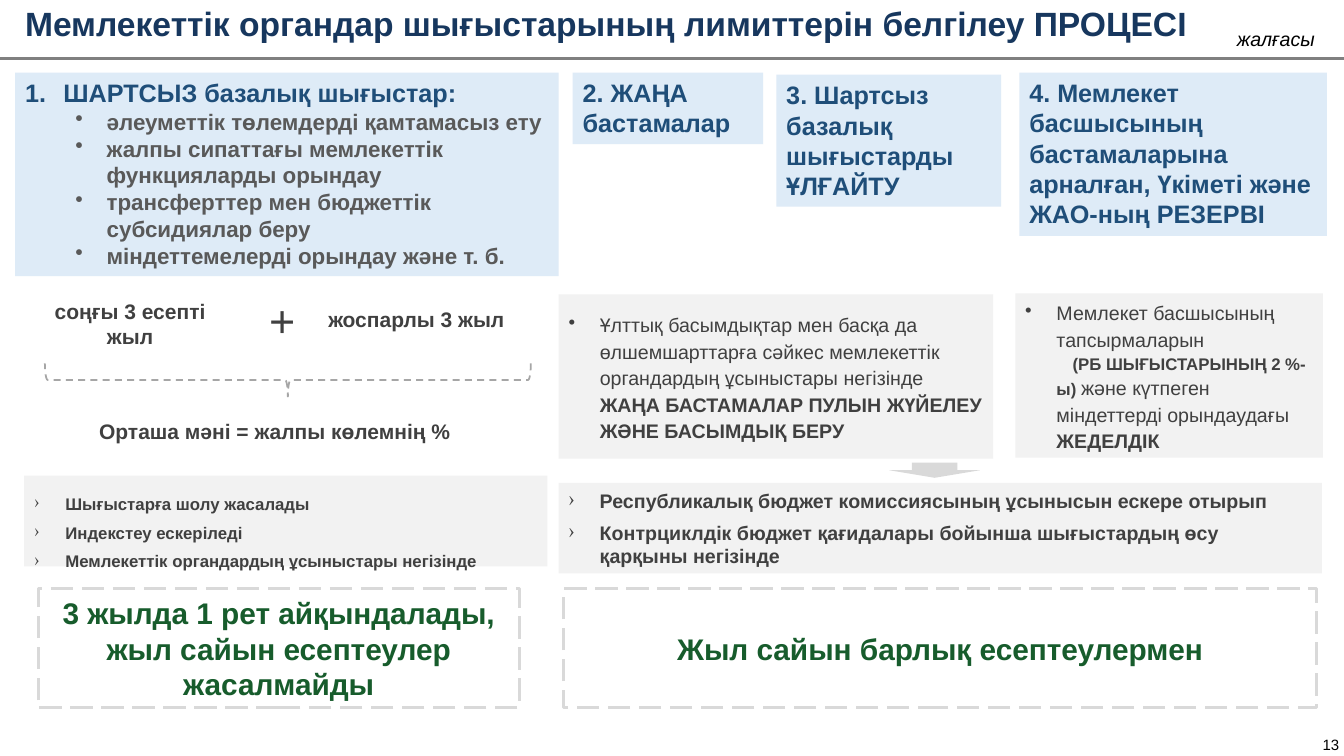
from lxml import etree
from pptx import Presentation
from pptx.dml.color import RGBColor
from pptx.enum.dml import MSO_LINE_DASH_STYLE as Dash
from pptx.enum.shapes import MSO_CONNECTOR as Connector, MSO_SHAPE as Preset
from pptx.enum.text import MSO_ANCHOR as Anchor, PP_ALIGN as Align
from pptx.oxml.ns import qn
from pptx.util import Inches, Pt

NAVY = RGBColor(0x17, 0x37, 0x5E)
BLUE = RGBColor(0x1F, 0x4E, 0x79)
PALE_BLUE = RGBColor(0xDE, 0xEB, 0xF7)
PALE_GREY = RGBColor(0xF2, 0xF2, 0xF2)
LIGHT_GREY = RGBColor(0xD9, 0xD9, 0xD9)
BRACE_GREY = RGBColor(0xA6, 0xA6, 0xA6)
RULE_GREY = RGBColor(0x80, 0x80, 0x80)
MID_GREY = RGBColor(0x59, 0x59, 0x59)
DARK_GREY = RGBColor(0x40, 0x40, 0x40)
GREEN = RGBColor(0x17, 0x5C, 0x2C)
BLACK = RGBColor(0, 0, 0)


def add_para(box, content, size, color=DARK_GREY, bold=False, italic=False,
             align=Align.LEFT, bullet=None, margin=0, indent=0, level=0,
             after=0, spacing=None):
    """Add a paragraph; content is text or a list of (text, size, bold)."""
    frame = box.text_frame
    para = frame.paragraphs[0]
    if para.runs:
        para = frame.add_paragraph()
    para.alignment = align
    para.level = level
    props = para._p.get_or_add_pPr()
    props.set("marL", str(Inches(margin)))
    props.set("indent", str(Inches(indent)))
    if bullet == "1.":
        etree.SubElement(props, qn("a:buAutoNum"), type="arabicPeriod")
    elif bullet:
        etree.SubElement(props, qn("a:buChar"), char=bullet)
    else:
        etree.SubElement(props, qn("a:buNone"))
    para.space_after = Pt(after)
    if spacing:
        para.line_spacing = spacing
    font = para.font
    font.name, font.size, font.bold, font.italic = "Arial", Pt(size), bold, italic
    font.color.rgb = color
    if isinstance(content, str):
        para.add_run().text = content
        return
    for text, span_size, span_bold in content:
        span = para.add_run()
        span.text = text
        span.font.size, span.font.bold = Pt(span_size), span_bold


def add_label(page, area, text, size, **style):
    box = page.shapes.add_textbox(*map(Inches, area))
    box.text_frame.word_wrap = True
    add_para(box, text, size, **style)
    return box


def add_figure(page, preset, area, fill=None, line=None, width=1, dash=None,
               anchor=Anchor.MIDDLE):
    figure = page.shapes.add_shape(preset, *map(Inches, area))
    figure.shadow.inherit = False
    if fill is not None:
        figure.fill.solid()
        figure.fill.fore_color.rgb = fill
    else:
        figure.fill.background()
    if line is not None:
        figure.line.color.rgb = line
        figure.line.width = Pt(width)
        figure.line.dash_style = dash
    else:
        figure.line.fill.background()
    figure.text_frame.word_wrap = True
    figure.text_frame.vertical_anchor = anchor
    return figure


def add_heading_card(page, area, text, **style):
    card = add_figure(page, Preset.RECTANGLE, area, PALE_BLUE, anchor=Anchor.TOP)
    add_para(card, text, 18, color=BLUE, bold=True, **style)
    return card


def add_list_panel(page, area, items, size, anchor=Anchor.MIDDLE):
    panel = add_figure(page, Preset.RECTANGLE, area, PALE_GREY, anchor=anchor)
    for item in items:
        add_para(panel, item, size, bold=True, bullet="›",
                 margin=0.31, indent=-0.31, after=6)
    return panel


def add_result(page, area, text):
    result = add_figure(page, Preset.RECTANGLE, area, line=LIGHT_GREY, width=2,
                        dash=Dash.LONG_DASH)
    add_para(result, text, 21.3, color=GREEN, bold=True, align=Align.CENTER)


def add_rule(page, y):
    rule = page.shapes.add_connector(Connector.STRAIGHT, 0, Inches(y),
                                     Inches(13.33), Inches(y))
    rule.line.color.rgb = RULE_GREY
    rule.line.width = Pt(2.25)
    etree.SubElement(rule._element.spPr, qn("a:effectLst"))


def main():
    deck = Presentation()
    deck.slide_width, deck.slide_height = Inches(13.33), Inches(7.5)
    page = deck.slides.add_slide(deck.slide_layouts[6])

    # Header and page number
    add_rule(page, 0.58)
    add_label(page, (0.15, 0.02, 11.97, 0.51),
              "Мемлекеттік органдар шығыстарының лимиттерін белгілеу ПРОЦЕСІ",
              24, color=NAVY, bold=True, spacing=0.9, after=5.9)
    add_label(page, (12.17, 0.22, 0.98, 0.34), "жалғасы", 14,
              color=BLACK, italic=True)
    number = add_label(page, (13.07, 7.27, 0.26, 0.24), "13", 10.7,
                       color=BLACK, align=Align.CENTER)
    frame = number.text_frame
    frame.margin_left = frame.margin_right = 0
    frame.vertical_anchor = Anchor.MIDDLE

    # Four heading cards
    base = add_heading_card(page, (0.15, 0.72, 5.39, 2.02),
                            "ШАРТСЫЗ базалық шығыстар:",
                            bullet="1.", margin=0.38, indent=-0.38)
    for item in ("әлеуметтік төлемдерді қамтамасыз ету",
                 "жалпы сипаттағы мемлекеттік функцияларды орындау",
                 "трансферттер мен бюджеттік субсидиялар беру",
                 "міндеттемелерді орындау және т. б."):
        add_para(base, item, 16, color=MID_GREY, bold=True, bullet="•",
                 margin=0.81, indent=-0.31, level=1)
    add_heading_card(page, (5.68, 0.72, 1.89, 0.71), "2. ЖАҢА бастамалар")
    add_heading_card(page, (7.7, 0.74, 2.23, 1.31),
                     "3. Шартсыз базалық шығыстарды ҰЛҒАЙТУ")
    add_heading_card(page, (10.11, 0.72, 3.05, 1.62),
                     "4. Мемлекет басшысының бастамаларына арналған, "
                     "Үкіметі және ЖАО-ның РЕЗЕРВІ")

    # Average formula with brace
    for area, text in (
            ((0.2, 2.91, 2.18, 0.61), "соңғы 3 есепті жыл"),
            ((3.11, 2.99, 2.04, 0.35), "жоспарлы 3 жыл"),
            ((0.38, 4.1, 4.69, 0.35), "Орташа мәні = жалпы көлемнің %")):
        add_label(page, area, text, 15, bold=True, align=Align.CENTER)
    add_label(page, (2.57, 2.85, 0.42, 0.64), "+", 32)
    brace = add_figure(page, Preset.RIGHT_BRACE, (2.69, 1.36, 0.33, 4.82),
                       line=BRACE_GREY, width=1.25, dash=Dash.DASH)
    brace.rotation = 90

    # Explanations of initiatives and reserve
    bulleted = dict(bullet="•", margin=0.31, indent=-0.31, spacing=1.12)
    pool = add_figure(page, Preset.RECTANGLE, (5.54, 2.92, 4.31, 1.63), PALE_GREY)
    add_para(pool, [
        ("Ұлттық басымдықтар мен басқа да өлшемшарттарға сәйкес мемлекеттік "
         "органдардың ұсыныстары негізінде ", 14, False),
        ("ЖАҢА БАСТАМАЛАР ПУЛЫН ЖҮЙЕЛЕУ ЖӘНЕ БАСЫМДЫҚ БЕРУ", 14, True),
    ], 14, after=6, **bulleted)
    reserve = add_figure(page, Preset.RECTANGLE, (10.07, 2.91, 3.05, 1.63), PALE_GREY)
    add_para(reserve, "Мемлекет басшысының тапсырмаларын", 14, **bulleted)
    add_para(reserve, [
        ("(РБ ШЫҒЫСТАРЫНЫҢ 2 %-ы) ", 12, True),
        ("және күтпеген міндеттерді орындаудағы ", 14, False),
        ("ЖЕДЕЛДІК", 14, True),
    ], 14, margin=0.31, indent=0.16, spacing=1.12, after=6)
    add_figure(page, Preset.DOWN_ARROW, (8.82, 4.59, 0.9, 0.15), LIGHT_GREY)

    # Conditions
    review = add_list_panel(page, (0.24, 4.72, 5.19, 0.9), (
        "Шығыстарға шолу жасалады",
        "Индекстеу ескеріледі",
        "Мемлекеттік органдардың ұсыныстары негізінде"), 12, Anchor.TOP)
    review.text_frame.margin_top = Inches(0.18)
    add_list_panel(page, (5.54, 4.79, 7.57, 0.9), (
        "Республикалық бюджет комиссиясының ұсынысын ескере отырып",
        "Контрциклдік бюджет қағидалары бойынша шығыстардың өсу қарқыны "
        "негізінде"), 14)

    # Results
    add_result(page, (0.38, 5.84, 4.77, 1.18),
               "3 жылда 1 рет айқындалады, жыл сайын есептеулер жасалмайды")
    add_result(page, (5.59, 5.84, 7.47, 1.18), "Жыл сайын барлық есептеулермен")

    deck.save("out.pptx")


if __name__ == "__main__":
    main()
